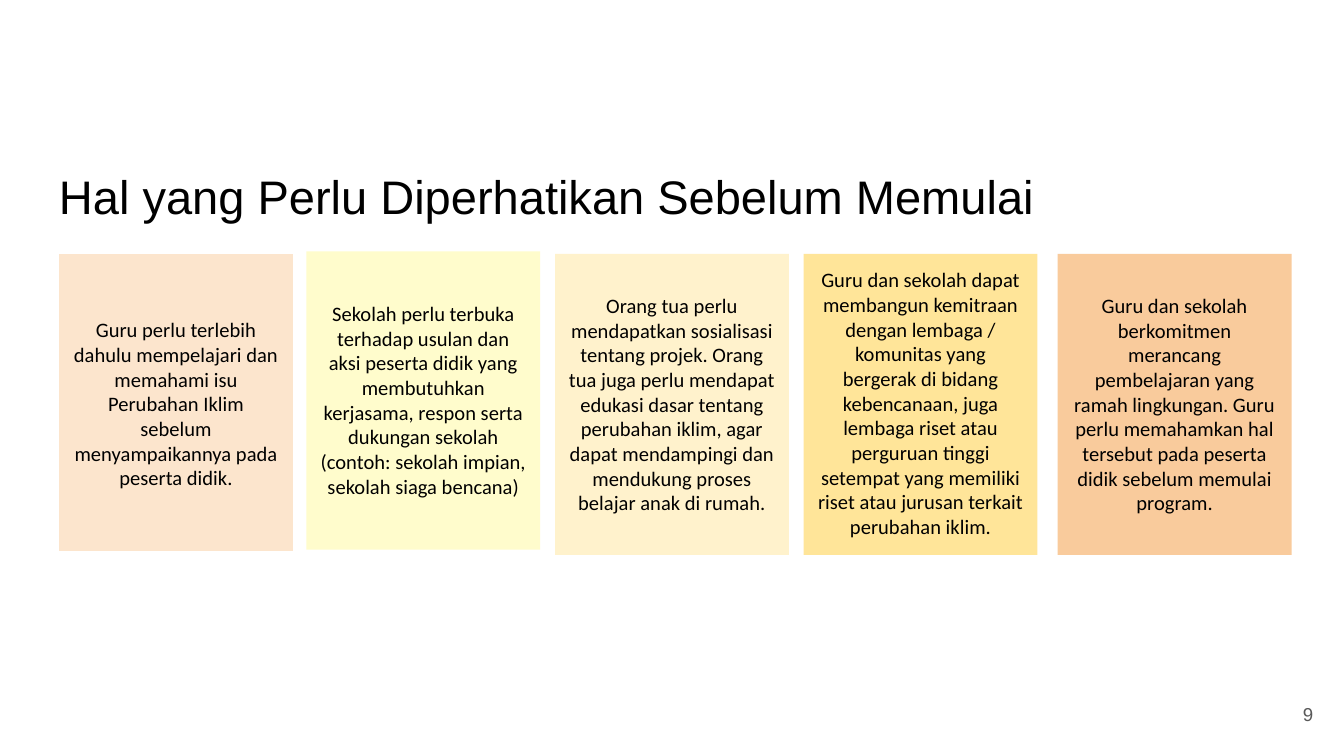
from pptx import Presentation
from pptx.dml.color import RGBColor
from pptx.enum import shapes, text
from pptx.util import Inches, Pt

BLACK = RGBColor(0x00, 0x00, 0x00)
GREY = RGBColor(0x59, 0x59, 0x59)
PEACH = RGBColor(0xFC, 0xE5, 0xCD)
LEMON = RGBColor(0xFF, 0xFC, 0xCC)
CREAM = RGBColor(0xFF, 0xF2, 0xCC)
GOLD = RGBColor(0xFF, 0xE5, 0x99)
ORANGE = RGBColor(0xF9, 0xCB, 0x9C)

TITLE = "Hal yang Perlu Diperhatikan Sebelum Memulai"
PAGE = "9"
# left, top, height, space above the text, fill, text
CARDS = [
    (0.44, 1.89, 2.21, 0.37, PEACH,
     "Guru perlu terlebih dahulu mempelajari dan memahami isu Perubahan "
     "Iklim sebelum menyampaikannya pada peserta didik."),
    (2.28, 1.87, 2.22, 0.27, LEMON,
     "Sekolah perlu terbuka terhadap usulan dan aksi peserta didik yang "
     "membutuhkan kerjasama, respon serta dukungan sekolah (contoh: sekolah "
     "impian, sekolah siaga bencana)"),
    (4.13, 1.89, 2.24, 0.19, CREAM,
     "Orang tua perlu mendapatkan sosialisasi tentang projek. Orang tua juga "
     "perlu mendapat edukasi dasar tentang perubahan iklim, agar dapat "
     "mendampingi dan mendukung proses belajar anak di rumah."),
    (5.98, 1.89, 2.24, 0, GOLD,
     "Guru dan sekolah dapat membangun kemitraan dengan lembaga / komunitas "
     "yang bergerak di bidang kebencanaan, juga lembaga riset atau perguruan "
     "tinggi setempat yang memiliki riset atau jurusan terkait perubahan "
     "iklim."),
    (7.87, 1.89, 2.24, 0.19, ORANGE,
     "Guru dan sekolah berkomitmen merancang pembelajaran yang ramah "
     "lingkungan. Guru perlu memahamkan hal tersebut pada peserta didik "
     "sebelum memulai program."),
]
WIDTH = 1.74
INSET = 0.1


def write(shape, words, font, size, color, align, anchor, top=INSET):
    frame = shape.text_frame
    frame.text = words
    frame.word_wrap = True
    frame.vertical_anchor = anchor
    frame.margin_left = frame.margin_right = Inches(INSET)
    frame.margin_bottom = Inches(INSET)
    frame.margin_top = Inches(top)
    par = frame.paragraphs[0]
    par.alignment = align
    run = par.runs[0]
    run.font.name = font
    run.font.size = Pt(size)
    run.font.color.rgb = color


def main():
    deck = Presentation()
    deck.slide_width = Inches(10)
    deck.slide_height = Inches(10) * 9 // 16
    slide = deck.slides.add_slide(deck.slide_layouts[6])
    align, anchor = text.PP_ALIGN, text.MSO_ANCHOR

    title = slide.shapes.add_textbox(
        Inches(0.34), Inches(1.15), Inches(9.32), Inches(0.63))
    write(title, TITLE, "Arial", 25.2, BLACK, align.LEFT, anchor.TOP)

    for left, top, height, space, fill, words in CARDS:
        card = slide.shapes.add_shape(
            shapes.MSO_SHAPE.RECTANGLE,
            Inches(left), Inches(top), Inches(WIDTH), Inches(height))
        card.shadow.inherit = False
        card.fill.solid()
        card.fill.fore_color.rgb = fill
        card.line.fill.background()
        write(card, words, "Calibri", 11, BLACK, align.CENTER, anchor.TOP,
              INSET + space)

    page = slide.shapes.add_textbox(
        Inches(9.27), Inches(5.1), Inches(0.6), Inches(0.43))
    write(page, PAGE, "Arial", 10, GREY, align.RIGHT, anchor.MIDDLE)
    deck.save("out.pptx")


if __name__ == "__main__":
    main()
